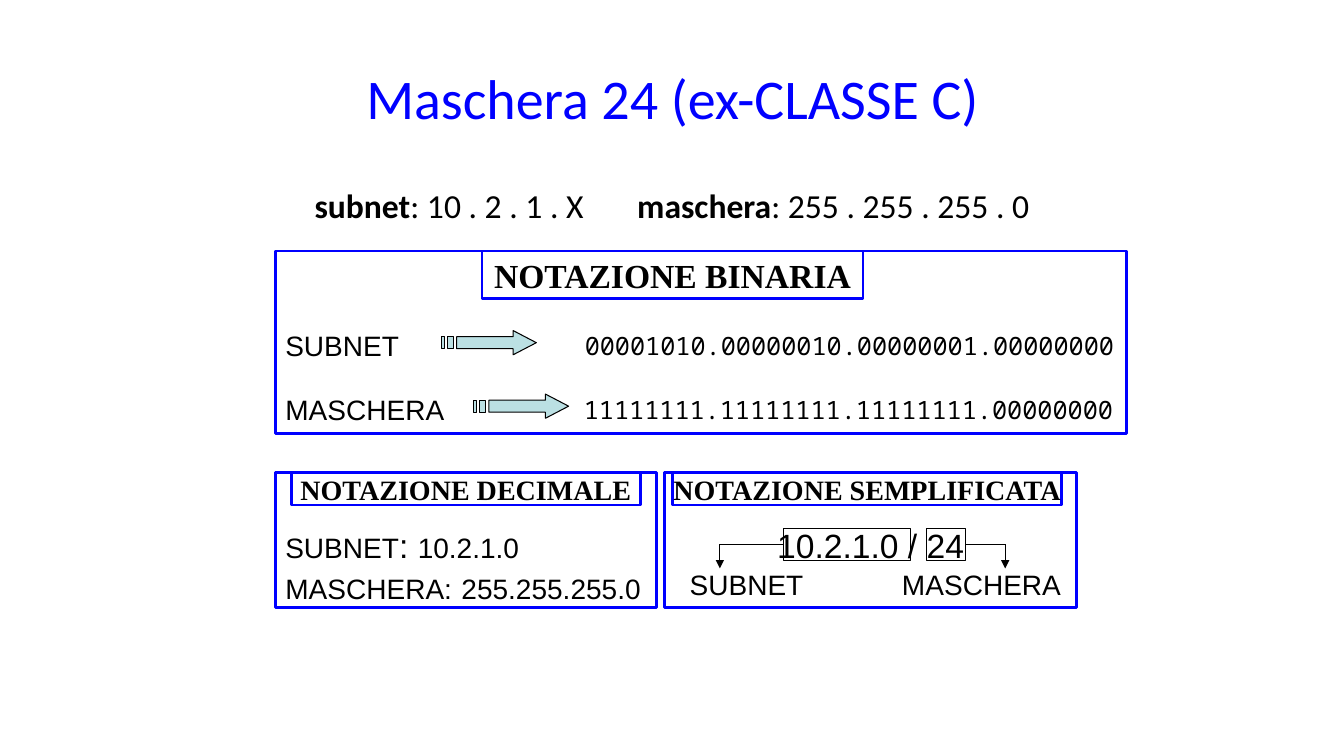
"""Build the slide on the /24 mask in binary, decimal and simplified notation."""
from typing import NamedTuple

from lxml import etree
from pptx import Presentation
from pptx.dml.color import RGBColor
from pptx.enum.shapes import MSO_CONNECTOR, MSO_SHAPE
from pptx.enum.text import MSO_ANCHOR, PP_ALIGN
from pptx.oxml.ns import qn
from pptx.util import Inches, Pt

RECT = MSO_SHAPE.RECTANGLE
STRAIGHT = MSO_CONNECTOR.STRAIGHT
MIDDLE = MSO_ANCHOR.MIDDLE
LEFT, CENTER = PP_ALIGN.LEFT, PP_ALIGN.CENTER
LEFT_SIDE, RIGHT_SIDE = 1, 3

COLORS = {"blue": "0000FF", "black": "000000", "arrow": "BBE0E3"}
FORMATS = {
    "title": {"name": "Calibri", "size": Pt(40)},
    "address": {"name": "Calibri", "size": Pt(24)},
    "address_bold": {"name": "Calibri", "size": Pt(24), "bold": True},
    "heading": {"name": "Times New Roman", "size": Pt(24), "bold": True},
    "subheading": {"name": "Times New Roman", "size": Pt(20), "bold": True},
    "body": {"name": "Arial", "size": Pt(20)},
    "large": {"name": "Arial", "size": Pt(24)},
    "bits": {"name": "Noto Sans Mono", "size": Pt(18)},
}


class Run(NamedTuple):
    text: str
    style: str
    color: str = "black"


class Box(NamedTuple):
    left: float
    top: float
    width: float
    height: float
    color: str = "blue"
    points: float = 2
    runs: tuple[Run, ...] = ()


class Label(NamedTuple):
    left: float
    middle: float
    width: float
    runs: tuple[Run, ...]
    align: PP_ALIGN = LEFT


BOXES = (
    Box(2.73, 2.49, 8.44, 1.81),
    Box(2.73, 4.69, 3.78, 1.34),
    Box(6.59, 4.69, 4.09, 1.34),
    Box(4.78, 2.49, 3.78, 0.47, runs=(Run("NOTAZIONE BINARIA", "heading"),)),
    Box(2.89, 4.69, 3.46, 0.32, runs=(Run("NOTAZIONE DECIMALE", "subheading"),)),
    Box(6.67, 4.69, 3.86, 0.32, runs=(Run("NOTAZIONE SEMPLIFICATA", "subheading"),)),
)
ADDRESS_BOX = Box(7.77, 5.24, 1.26, 0.32, "black", 0.75)
PREFIX_BOX = Box(9.19, 5.24, 0.39, 0.32, "black", 0.75)
WIRE_Y, ARROW_END_Y = 5.4, 5.64

LABELS = (
    Label(0.67, 0.96, 12, (Run("Maschera 24 (ex-CLASSE C)", "title", "blue"),), CENTER),
    Label(3.12, 2.03, 3.1, (Run("subnet", "address_bold"), Run(": 10 . 2 . 1 . X", "address"))),
    Label(6.32, 2.03, 4.5, (Run("maschera", "address_bold"),
                            Run(": 255 . 255 . 255 . 0", "address"))),
    Label(2.83, 3.43, 1.5, (Run("SUBNET", "body"),)),
    Label(5.8, 3.43, 5.5, (Run("00001010.00000010.00000001.00000000", "bits"),)),
    Label(2.83, 4.06, 1.8, (Run("MASCHERA", "body"),)),
    Label(5.79, 4.06, 5.5, (Run("11111111.11111111.11111111.00000000", "bits"),)),
    Label(2.83, 5.41, 3.6, (Run("SUBNET", "body"), Run(": ", "large"), Run("10.2.1.0", "body"))),
    Label(2.83, 5.81, 3.7, (Run("MASCHERA:", "body"), Run(" ", "large"),
                            Run("255.255.255.0", "body"))),
    Label(6.59, 5.41, 4.09, (Run("10.2.1.0 / 24", "large"),), CENTER),
    Label(6.84, 5.8, 1.4, (Run("SUBNET", "body"),)),
    Label(8.87, 5.8, 1.73, (Run("MASCHERA", "body"),), CENTER),
)
LABEL_HEIGHT = 0.4

ARROW_ORIGINS = ((4.38, 3.28), (4.7, 3.91))
ARROW_CONTOURS = (
    ((0.71, 0), (0.71, 0.06), (0.15, 0.06), (0.15, 0.18), (0.71, 0.18), (0.71, 0.24), (0.94, 0.12)),
    ((0.06, 0.06), (0.06, 0.18), (0.12, 0.18), (0.12, 0.06)),
    ((0, 0.06), (0, 0.18), (0.03, 0.18), (0.03, 0.06)),
)


def rgb(color: str) -> RGBColor:
    return RGBColor.from_string(COLORS[color])


def set_line(s, color: str, points: float) -> None:
    s.line.color.rgb = rgb(color)
    s.line.width = Pt(points)


def write(s, runs: tuple[Run, ...], align: PP_ALIGN) -> None:
    tf = s.text_frame
    frame = {"margin_left": 0, "margin_right": 0, "margin_top": 0, "margin_bottom": 0,
             "vertical_anchor": MIDDLE, "word_wrap": align == LEFT}
    for key, value in frame.items():
        setattr(tf, key, value)
    p = tf.paragraphs[0]
    p.alignment = align
    for run in runs:
        r = p.add_run()
        r.text = run.text
        for key, value in FORMATS[run.style].items():
            setattr(r.font, key, value)
        r.font.color.rgb = rgb(run.color)


def add_box(shapes, box: Box):
    s = shapes.add_shape(RECT, *map(Inches, box[:4]))
    s.shadow.inherit = False
    s.fill.background()
    set_line(s, box.color, box.points)
    if box.runs:
        write(s, box.runs, CENTER)
    return s


def add_label(shapes, label: Label) -> None:
    top = label.middle - LABEL_HEIGHT / 2
    s = shapes.add_textbox(*map(Inches, (label.left, top, label.width, LABEL_HEIGHT)))
    write(s, label.runs, label.align)


def add_striped_arrow(shapes, left: float, top: float) -> None:
    contours = [[(Inches(left + x), Inches(top + y)) for x, y in c] for c in ARROW_CONTOURS]
    builder = shapes.build_freeform(*contours[0][0])
    for i, points in enumerate(contours):
        if i:
            builder.move_to(*points[0])
        builder.add_line_segments(points[1:], close=True)
    s = builder.convert_to_shape()
    s.shadow.inherit = False
    s.fill.solid()
    s.fill.fore_color.rgb = rgb("arrow")
    set_line(s, "black", 0.75)


def add_wire(shapes, x1: float, y1: float, x2: float, y2: float, head: bool = False):
    s = shapes.add_connector(STRAIGHT, *map(Inches, (x1, y1, x2, y2)))
    set_line(s, "black", 0.75)
    if head:
        etree.SubElement(s.line._get_or_add_ln(), qn("a:tailEnd"), type="triangle")
    etree.SubElement(s._element.spPr, qn("a:effectLst"))
    return s


def add_callout(shapes, box: Box, side: int, turn_x: float) -> None:
    s = add_box(shapes, box)
    start_x = box.left if side == LEFT_SIDE else box.left + box.width
    add_wire(shapes, start_x, WIRE_Y, turn_x, WIRE_Y).begin_connect(s, side)
    add_wire(shapes, turn_x, WIRE_Y, turn_x, ARROW_END_Y, head=True)


def main() -> None:
    prs = Presentation()
    prs.slide_width, prs.slide_height = Inches(13.33), Inches(7.5)
    shapes = prs.slides.add_slide(prs.slide_layouts[6]).shapes
    for box in BOXES:
        add_box(shapes, box)
    for left, top in ARROW_ORIGINS:
        add_striped_arrow(shapes, left, top)
    add_callout(shapes, ADDRESS_BOX, LEFT_SIDE, 7.14)
    add_callout(shapes, PREFIX_BOX, RIGHT_SIDE, 9.97)
    for label in LABELS:
        add_label(shapes, label)
    prs.save("out.pptx")


if __name__ == "__main__":
    main()
